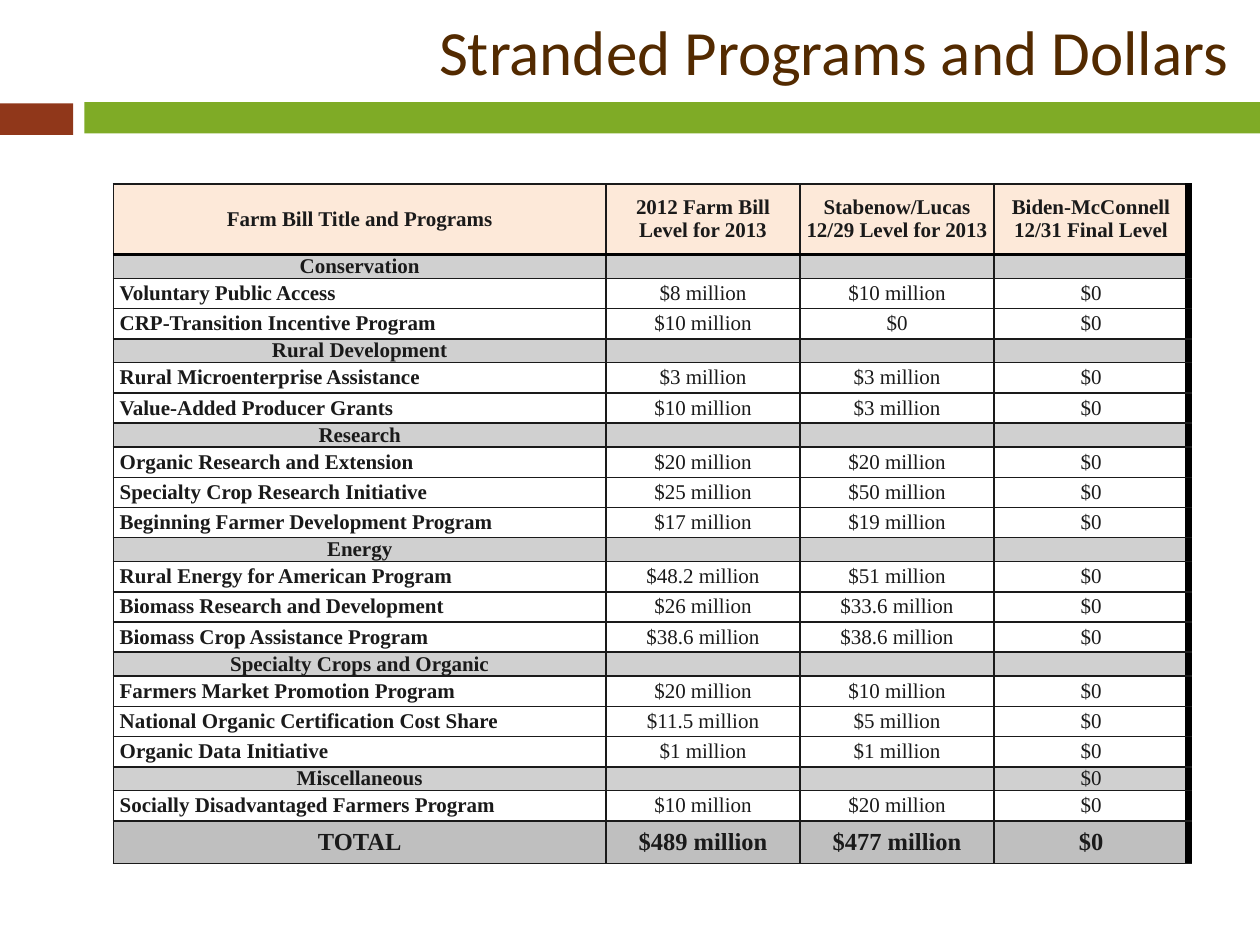
from dataclasses import dataclass

from lxml.etree import SubElement
from pptx import Presentation
from pptx.dml.color import RGBColor as Rgb
from pptx.enum.shapes import MSO_SHAPE as Shape
from pptx.enum.text import MSO_ANCHOR as Anchor, PP_ALIGN as Align
from pptx.oxml import parse_xml
from pptx.oxml.ns import nsdecls, qn
from pptx.util import Inches, Pt


@dataclass(frozen=True)
class Theme:
    brown: str = "532A00"
    rust: str = "90371A"
    green: str = "7FAB26"
    ink: str = "1A1A1A"
    black: str = "000000"
    peach: str = "FDE9D9"
    gray: str = "D0D0D0"
    dark: str = "BFBFBF"
    head: str = "Calibri"
    body: str = "Times New Roman"
    title: int = 36
    text: int = 12
    total: int = 14


T = Theme()
WIDTHS = (3.91, 1.54, 1.54, 1.54)
KINDS = {
    "head": dict(high=0.56, fill=T.peach, size=T.text, bold=True),
    "group": dict(high=0.19, fill=T.gray, size=T.text, bold=False),
    "item": dict(high=0.24, fill=None, size=T.text, bold=False),
    "total": dict(high=0.34, fill=T.dark, size=T.total, bold=True),
}
ROWS = [
    ("head", "Farm Bill Title and Programs", "2012 Farm Bill Level for 2013",
     "Stabenow/Lucas 12/29 Level for 2013", "Biden-McConnell 12/31 Final Level"),
    ("group", "Conservation", "", "", ""),
    ("item", "Voluntary Public Access", "$8 million", "$10 million", "$0"),
    ("item", "CRP-Transition Incentive Program", "$10 million", "$0", "$0"),
    ("group", "Rural Development", "", "", ""),
    ("item", "Rural Microenterprise Assistance", "$3 million", "$3 million", "$0"),
    ("item", "Value-Added Producer Grants", "$10 million", "$3 million", "$0"),
    ("group", "Research", "", "", ""),
    ("item", "Organic Research and Extension", "$20 million", "$20 million", "$0"),
    ("item", "Specialty Crop Research Initiative", "$25 million", "$50 million", "$0"),
    ("item", "Beginning Farmer Development Program", "$17 million", "$19 million", "$0"),
    ("group", "Energy", "", "", ""),
    ("item", "Rural Energy for American Program", "$48.2 million", "$51 million", "$0"),
    ("item", "Biomass Research and Development", "$26 million", "$33.6 million", "$0"),
    ("item", "Biomass Crop Assistance Program", "$38.6 million", "$38.6 million", "$0"),
    ("group", "Specialty Crops and Organic", "", "", ""),
    ("item", "Farmers Market Promotion Program", "$20 million", "$10 million", "$0"),
    ("item", "National Organic Certification Cost Share", "$11.5 million", "$5 million", "$0"),
    ("item", "Organic Data Initiative", "$1 million", "$1 million", "$0"),
    ("group", "Miscellaneous", "", "", "$0"),
    ("item", "Socially Disadvantaged Farmers Program", "$10 million", "$20 million", "$0"),
    ("total", "TOTAL", "$489 million", "$477 million", "$0"),
]


def apply(obj, vals):
    for key, val in vals.items():
        setattr(obj, key, val)


def place(obj, box):
    apply(obj, dict(zip(("left", "top", "width", "height"), map(Inches, box))))


def write(para, text, font, size, color, bold, align):
    para.alignment = align
    run = para.add_run()
    run.text = text
    apply(run.font, dict(name=font, size=Pt(size), bold=bold))
    run.font.color.rgb = Rgb.from_string(color)


def add_title(slide, box):
    title = slide.shapes.title
    place(title, box)
    frame = title.text_frame
    apply(frame, dict(vertical_anchor=Anchor.MIDDLE, word_wrap=True))
    write(frame.paragraphs[0], "Stranded Programs and Dollars",
          T.head, T.title, T.brown, False, Align.RIGHT)


def add_band(slide, box):
    left, top, width, high = box
    parts = ((left, top + 0.01, 0.58, T.rust),
             (left + 0.67, top, width - 0.67, T.green))
    for x, y, wide, color in parts:
        bar = slide.shapes.add_shape(
            Shape.RECTANGLE, *map(Inches, (x, y, wide, high)))
        bar.shadow.inherit = False
        bar.fill.solid()
        bar.fill.fore_color.rgb = Rgb.from_string(color)
        bar.line.fill.background()


def add_edges(cell, edges):
    props = cell._tc.get_or_add_tcPr()
    for spot, (side, (color, wide)) in enumerate(edges.items()):
        props.insert(spot, parse_xml(
            f'<a:ln{side} {nsdecls("a")} w="{Pt(wide)}"><a:solidFill>'
            f'<a:srgbClr val="{color}"/></a:solidFill></a:ln{side}>'))


def fill_cell(cell, text, kind, row, col):
    look = KINDS[kind]
    apply(cell, dict(margin_left=Inches(0.05), margin_right=Inches(0.05),
                     margin_top=0, margin_bottom=0,
                     vertical_anchor=Anchor.MIDDLE))
    if look["fill"]:
        cell.fill.solid()
        cell.fill.fore_color.rgb = Rgb.from_string(look["fill"])
    else:
        cell.fill.background()
    para = cell.text_frame.paragraphs[0]
    if text:
        align = Align.LEFT if kind == "item" and col == 0 else Align.CENTER
        write(para, text, T.body, look["size"], T.ink,
              look["bold"] or col == 0, align)
    else:
        end = SubElement(para._p, qn("a:endParaRPr"), sz=str(look["size"] * 100))
        SubElement(end, qn("a:latin"), typeface=T.body)
    thin = (T.ink, 1)
    rule = (T.black, 1.5)
    add_edges(cell, {
        "L": thin,
        "R": (T.black, 4.5) if col == len(WIDTHS) - 1 else thin,
        "T": rule if row == 1 else thin,
        "B": rule if row == 0 else thin,
    })


def add_grid(slide, box):
    grid = slide.shapes.add_table(
        len(ROWS), len(WIDTHS), *map(Inches, box)).table
    apply(grid, dict(first_row=False, horz_banding=False))
    for col, wide in zip(grid.columns, WIDTHS):
        col.width = Inches(wide)
    for row, (kind, *texts) in enumerate(ROWS):
        grid.rows[row].height = Inches(KINDS[kind]["high"])
        for col, text in enumerate(texts):
            fill_cell(grid.cell(row, col), text, kind, row, col)


def main():
    deck = Presentation()
    apply(deck, dict(slide_width=Inches(10), slide_height=Inches(7.5)))
    slide = deck.slides.add_slide(deck.slide_layouts[5])
    add_band(slide, (0, 0.81, 10, 0.25))
    add_title(slide, (2.9, 0.06, 6.95, 0.68))
    add_grid(slide, (0.9, 1.46, 8.53, 5.48))
    deck.save("out.pptx")


if __name__ == "__main__":
    main()
